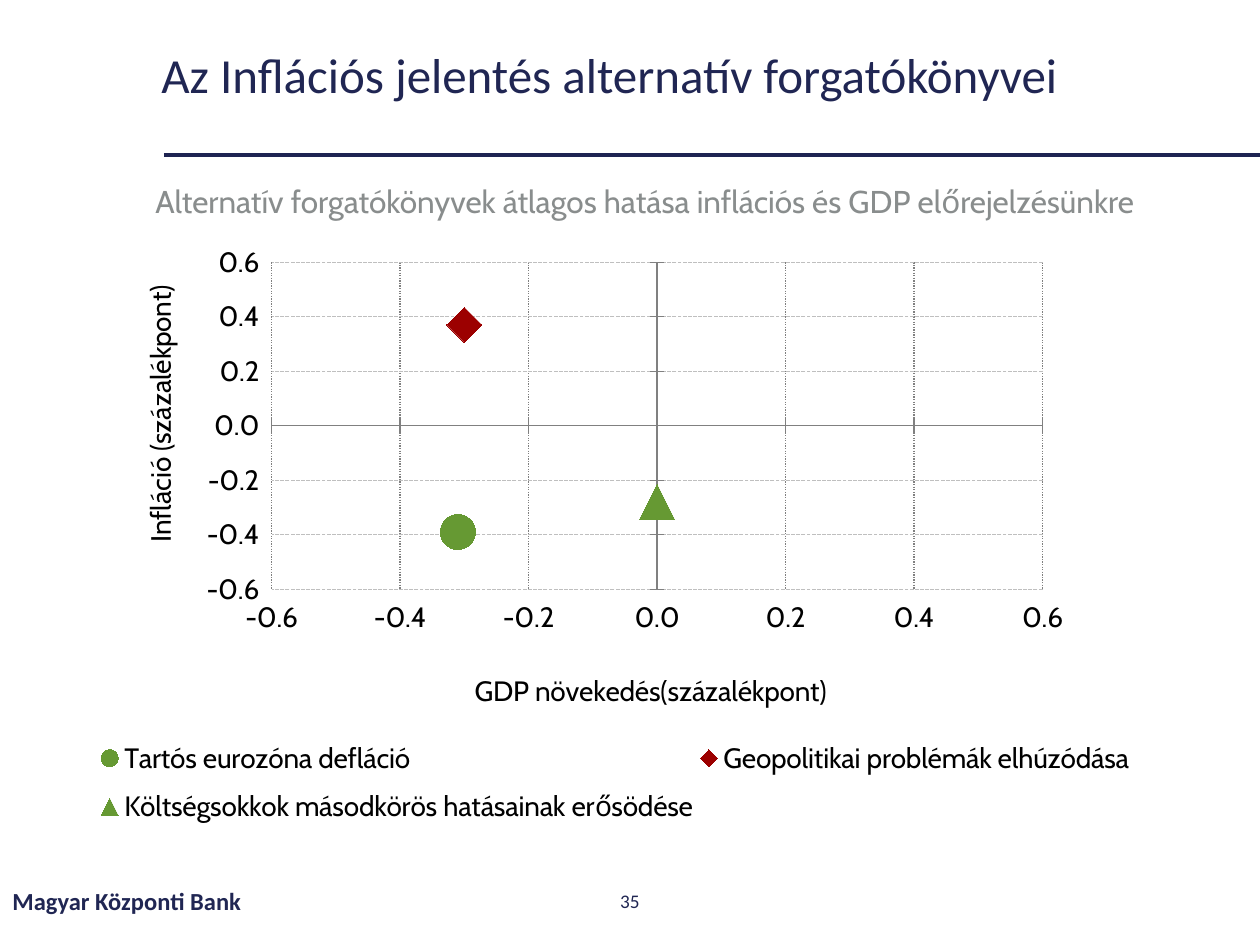
"""Build the slide on the alternative scenarios of the inflation report."""
import pptx
import pptx.chart.data
import pptx.dml.color
import pptx.enum.chart
import pptx.enum.dml
import pptx.enum.shapes
import pptx.enum.text
import pptx.oxml
import pptx.oxml.ns
import pptx.util

Pt = pptx.util.Pt
RGB = pptx.dml.color.RGBColor
Dash = pptx.enum.dml.MSO_LINE
Mark = pptx.enum.chart.XL_MARKER_STYLE
Align = pptx.enum.text.PP_ALIGN
qn = pptx.oxml.ns.qn

NAVY = RGB(0x20, 0x26, 0x53)
RULE = RGB(0x1E, 0x24, 0x52)
GREY = RGB(0x89, 0x8D, 0x8D)
PALE = RGB(0xBF, 0xBF, 0xBF)
DARK = RGB(0x80, 0x80, 0x80)
BLACK = RGB(0, 0, 0)
GREEN = RGB(0x66, 0x99, 0x33)
RED = RGB(0x9C, 0, 0)


def write(shape, text, size, face, color, align=Align.LEFT, bold=False):
    frame = shape.text_frame
    frame.word_wrap = True
    frame.vertical_anchor = pptx.enum.text.MSO_ANCHOR.MIDDLE
    para = frame.paragraphs[0]
    para.alignment = align
    run = para.add_run()
    run.text = text
    run.font.size = Pt(size)
    run.font.name = face
    run.font.color.rgb = color
    run.font.bold = bold
    return para


def place(parent, tag, spots, inner=False):
    for old in parent.findall(qn("c:layout")):
        parent.remove(old)
    target = '<c:layoutTarget val="inner"/>' if inner else ""
    modes = "".join(f'<c:{k}Mode val="edge"/>' for k in "xy")
    sizes = "".join(f'<c:{k} val="{v}"/>' for k, v in zip("xywh", spots))
    layout = pptx.oxml.parse_xml(
        f'<c:layout {pptx.oxml.ns.nsdecls("c")}><c:manualLayout>'
        f"{target}{modes}{sizes}</c:manualLayout></c:layout>")
    parent.find(qn(tag)).addprevious(layout)


deck = pptx.Presentation()
deck.slide_width, deck.slide_height = Pt(720), Pt(540)
slide = deck.slides.add_slide(deck.slide_layouts[5])
shapes = slide.shapes

rule = shapes.add_connector(
    pptx.enum.shapes.MSO_CONNECTOR.STRAIGHT, Pt(93.6), Pt(88.5), Pt(720), Pt(88.5))
rule.line.color.rgb = RULE
rule.line.width = Pt(2.25)
rule._element.spPr.append(
    pptx.oxml.parse_xml(f'<a:effectLst {pptx.oxml.ns.nsdecls("a")}/>'))

title = shapes.title
title.left, title.top, title.width, title.height = Pt(85), Pt(14.4), Pt(590), Pt(60)
para = write(title, "Az Inflációs jelentés alternatív forgatókönyvei", 28, "Calibri", NAVY)
para.line_spacing = 0.9

for text, left, top, width, size, face, color, align, bold in (
    ("Magyar Központi Bank", 0, 500.4, 243, 14, "Calibri", NAVY, Align.LEFT, True),
    ("35", 279, 500.4, 162, 11, "Calibri", NAVY, Align.CENTER, False),
    ("Alternatív forgatókönyvek átlagos hatása inflációs és GDP előrejelzésünkre",
     48, 100, 641, 18, "Cabin", GREY, Align.CENTER, False),
):
    box = shapes.add_textbox(Pt(left), Pt(top), Pt(width), Pt(29))
    write(box, text, size, face, color, align, bold)

points = (
    ("Tartós eurozóna defláció", -0.31, -0.39, Mark.CIRCLE, GREEN),
    ("Geopolitikai problémák elhúzódása", -0.30, 0.37, Mark.DIAMOND, RED),
    ("Költségsokkok másodkörös hatásainak erősödése", 0, -0.28, Mark.TRIANGLE, GREEN),
)
data = pptx.chart.data.XyChartData(number_format="0.0")
for name, gdp, rate, style, color in points:
    data.add_series(name).add_data_point(gdp, rate)
chart = shapes.add_chart(
    pptx.enum.chart.XL_CHART_TYPE.XY_SCATTER,
    Pt(54), Pt(139.7), Pt(595.4), Pt(339.8), data).chart
chart.has_title = False
chart.font.size = Pt(16)
chart.font.name = "Cabin"
chart.font.color.rgb = BLACK
plot = chart.plots[0]
plot.vary_by_categories = False
for series, (name, gdp, rate, style, color) in zip(plot.series, points):
    series.smooth = False
    series.format.line.fill.background()
    mark = series.marker
    mark.style = style
    mark.size = 20
    mark.format.fill.solid()
    mark.format.fill.fore_color.rgb = color
    mark.format.line.color.rgb = color

for axis, text, spot, turn, dash, shade in (
    (chart.category_axis, "GDP növekedés(százalékpont)", (0.36, 0.71), 0,
     Dash.ROUND_DOT, DARK),
    (chart.value_axis, "Infláció (százalékpont)", (0.04, 0.06), -5400000,
     Dash.SQUARE_DOT, PALE),
):
    axis.minimum_scale, axis.maximum_scale, axis.major_unit = -0.6, 0.6, 0.2
    axis.major_tick_mark = pptx.enum.chart.XL_TICK_MARK.CROSS
    axis.minor_tick_mark = pptx.enum.chart.XL_TICK_MARK.NONE
    axis.tick_label_position = pptx.enum.chart.XL_TICK_LABEL_POSITION.LOW
    axis.tick_labels.number_format = "0.0"
    axis.tick_labels.number_format_is_linked = False
    axis.format.line.color.rgb = DARK
    axis.format.line.width = Pt(0.75)
    axis.has_major_gridlines = True
    grid = axis.major_gridlines.format.line
    grid.color.rgb = shade
    grid.width = Pt(0.75)
    grid.dash_style = dash
    label = axis.axis_title
    run = label.text_frame.paragraphs[0].add_run()
    run.text = text
    run.font.size = Pt(16)
    run.font.name = "Cabin"
    run.font.bold = False
    run.font.color.rgb = BLACK
    label._element.find(".//" + qn("a:bodyPr")).set("rot", str(turn))
    place(label._element, "c:overlay", spot)

chart.has_legend = True
chart.legend.include_in_layout = False
chart.legend.font.size = Pt(16)
chart.legend.font.name = "Cabin"
place(chart.legend._element, "c:overlay", (0, 0.81, 1, 0.19))
area = chart._chartSpace.find(".//" + qn("c:plotArea"))
place(area, "c:scatterChart", (0.17, 0.03, 0.74, 0.55), True)

deck.save("out.pptx")
